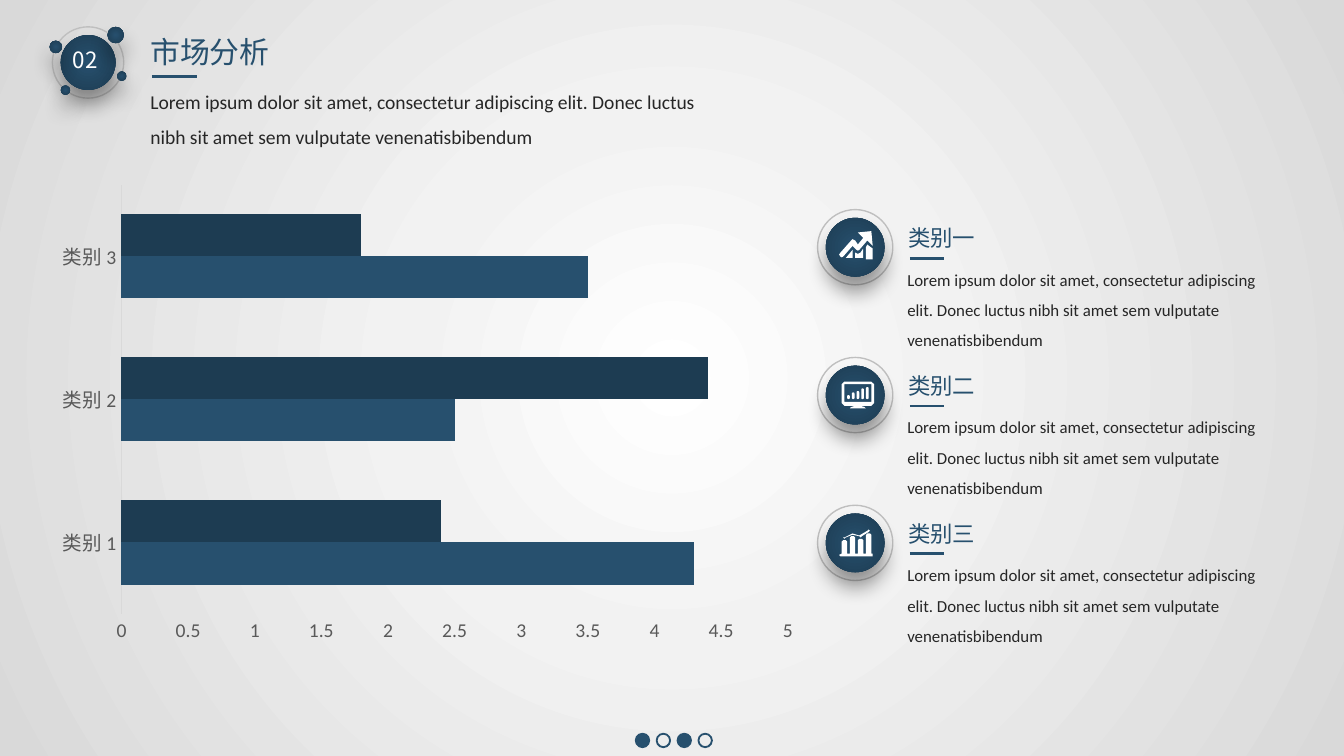
from pptx import Presentation
from pptx import util as u
from pptx.chart.data import CategoryChartData
from pptx.dml.color import RGBColor
from pptx.enum import chart as charts, shapes, text
from pptx.oxml import parse_xml
from pptx.oxml.ns import nsdecls, qn
from pptx.oxml.xmlchemy import OxmlElement

BLUE = RGBColor(0x27, 0x50, 0x6E)
NAVY = RGBColor(0x1D, 0x3C, 0x52)
INK = RGBColor(0x26, 0x26, 0x26)
GREY = RGBColor(0x59, 0x59, 0x59)
RING_GREY = RGBColor(0xBF, 0xBF, 0xBF)
AXIS_GREY = RGBColor(0xD9, 0xD9, 0xD9)
PALE_GREY = RGBColor(0xF2, 0xF2, 0xF2)
WHITE = RGBColor(0xFF, 0xFF, 0xFF)

HAN = "Noto Sans CJK SC"
LATIN = "Calibri"
LOREM = ("Lorem ipsum dolor sit amet, consectetur adipiscing elit. "
         "Donec luctus nibh sit amet sem vulputate venenatisbibendum")
ICON_UNIT = 0.72
BADGE_INSET = 4.4
ITEM_LEFT, ITEM_TOP, ITEM_STEP = 438, 112.3, 79.2


def points(*lengths):
    return [u.Pt(length) for length in lengths]


def make_radial(element, stops):
    gradient = element.find(".//" + qn("a:gradFill"))
    marks = "".join(f'<a:gs pos="{place * 1000}"><a:srgbClr val="{color}"/></a:gs>'
                    for place, color in stops)
    gradient.getparent().replace(gradient, parse_xml(
        f'<a:gradFill {nsdecls("a")} rotWithShape="1"><a:gsLst>{marks}</a:gsLst>'
        '<a:path path="circle"><a:fillToRect l="50000" t="50000" r="50000" b="50000"/>'
        '</a:path></a:gradFill>'))


def paint(shape, fill=None, line=None, width=1):
    shape.shadow.inherit = False
    if fill is None:
        shape.fill.background()
    else:
        shape.fill.solid()
        shape.fill.fore_color.rgb = fill
    if line is None:
        shape.line.fill.background()
    else:
        shape.line.color.rgb = line
        shape.line.width = u.Pt(width)


def add_circle(canvas, left, top, size, **style):
    circle = canvas.add_shape(shapes.MSO_SHAPE.OVAL, *points(left, top, size, size))
    paint(circle, **style)
    return circle


def add_disc(canvas, left, top, size):
    disc = add_circle(canvas, left, top, size)
    disc.fill.gradient()
    make_radial(disc.element, [(0, BLUE), (100, NAVY)])
    disc.element.spPr.find(qn("a:effectLst")).append(parse_xml(
        f'<a:outerShdw {nsdecls("a")} blurRad="{u.Pt(11)}" dist="{u.Pt(8)}" dir="5400000" '
        'algn="t" rotWithShape="0"><a:srgbClr val="000000"><a:alpha val="40000"/>'
        '</a:srgbClr></a:outerShdw>'))


def add_badge(canvas, left, top, size):
    add_circle(canvas, left, top, size, line=RING_GREY, width=0.75)
    add_disc(canvas, left + BADGE_INSET, top + BADGE_INSET, size - 2 * BADGE_INSET)


def fill_text(box, words, size, font, color, spacing=None, wrap=True):
    frame = box.text_frame
    frame.text = words
    frame.word_wrap = wrap
    frame.auto_size = text.MSO_AUTO_SIZE.SHAPE_TO_FIT_TEXT
    frame.vertical_anchor = text.MSO_ANCHOR.TOP
    para = frame.paragraphs[0]
    para.alignment = text.PP_ALIGN.LEFT
    para.space_before = u.Pt(0)
    if spacing:
        para.line_spacing = spacing
    span = para.runs[0]
    span.font.size = u.Pt(size)
    span.font.name = font
    span.font.color.rgb = color
    east_asian = OxmlElement("a:ea")
    east_asian.set("typeface", font)
    span.font._element.find(qn("a:latin")).addnext(east_asian)


def add_text(page, left, top, width, height, *content, **options):
    box = page.shapes.add_textbox(*points(left, top, width, height))
    fill_text(box, *content, **options)


def fill_placeholder(box, left, top, width, height, *content, **options):
    box.left, box.top, box.width, box.height = points(left, top, width, height)
    fill_text(box, *content, **options)


def remove_bullet(para):
    properties = para._p.get_or_add_pPr()
    properties.set("marL", "0")
    properties.set("indent", "0")
    properties.append(OxmlElement("a:buNone"))


def add_underline(page, left, top, length):
    rule = page.shapes.add_connector(shapes.MSO_CONNECTOR.STRAIGHT,
                                     *points(left, top, left + length, top))
    rule.line.color.rgb = BLUE
    rule.line.width = u.Pt(1.5)
    rule.element.spPr.append(OxmlElement("a:effectLst"))


def add_outline(canvas, left, top, *contours):
    placed = [[points(left + x * ICON_UNIT, top + y * ICON_UNIT) for x, y in contour]
              for contour in contours]
    builder = canvas.build_freeform(*placed[0][0], scale=1.0)
    builder.add_line_segments(placed[0][1:])
    for contour in placed[1:]:
        builder.move_to(*contour[0])
        builder.add_line_segments(contour[1:])
    paint(builder.convert_to_shape(), WHITE)


def draw_growth(canvas, left, top):
    for contour in (
        [(37, 26), (36, 28), (36, 37), (41, 37), (41, 29)],
        [(26, 27), (19, 35), (18, 35.5), (17, 35), (16, 33.5), (17, 32), (25, 23),
         (26, 22), (28, 23), (30, 26), (34, 21), (30, 17), (40, 16), (41, 27),
         (37, 23), (31, 30), (30, 30.5), (29, 30)],
        [(32, 32), (30, 33), (28, 32), (28, 36), (34, 36), (34, 29)],
        [(21, 36), (26, 36), (26, 30)],
    ):
        add_outline(canvas, left, top, contour)


def draw_monitor(canvas, left, top):
    frame = [(20, 18), (40, 18), (42, 20), (42, 34), (40, 36), (32, 36), (35, 37),
             (36, 38), (24, 38), (25, 37), (28, 36), (20, 36), (18, 34), (18, 20)]
    screen = [(20, 20), (20, 33), (40, 33), (40, 20)]
    add_outline(canvas, left, top, frame, screen)
    for x, y in zip((22, 25.5, 29, 32.5, 36), (28, 26, 25, 23, 22)):
        bar = canvas.add_shape(shapes.MSO_SHAPE.ROUNDED_RECTANGLE, *points(
            left + x * ICON_UNIT, top + y * ICON_UNIT, 2 * ICON_UNIT, (31 - y) * ICON_UNIT))
        bar.adjustments[0] = 0.5
        paint(bar, WHITE)


def draw_columns(canvas, left, top):
    trend = [(19, 24), (20, 24), (25, 21.5), (26, 21), (31, 22.5), (32, 22), (37, 19),
             (38, 18), (39, 19), (38, 20), (33, 23), (32, 24), (31, 23), (26, 22),
             (21, 24), (20, 25)]
    skyline = [(16, 37)]
    for x, y in zip((18, 24, 30, 36), (26, 23, 25, 21)):
        skyline += [(x, 36), (x, y + 1), (x + 1, y), (x + 3, y), (x + 4, y + 1), (x + 4, 36)]
    add_outline(canvas, left, top, trend)
    add_outline(canvas, left, top, skyline + [(41, 36), (41, 38), (17, 38)])


def add_item(page, top, heading, font, draw_icon):
    add_badge(page.shapes.add_group_shape().shapes, ITEM_LEFT, top, 40.3)
    draw_icon(page.shapes.add_group_shape().shapes, ITEM_LEFT, top)
    add_text(page, 479, top + 23, 213.8, 56.2, LOREM, 9, LATIN, INK, spacing=1.5)
    add_text(page, 479.5, top + 4.3, 136.8, 21.6, heading, 12, font, BLUE)
    add_underline(page, 487.5, top + 26, 18)


def style_axis(axis):
    axis.has_major_gridlines = False
    axis.major_tick_mark = axis.minor_tick_mark = charts.XL_TICK_MARK.NONE
    font = axis.tick_labels.font
    font.size, font.name = u.Pt(10.5), LATIN
    font.color.rgb = GREY


def add_bar_chart(page):
    data = CategoryChartData()
    data.categories = ["类别 1", "类别 2", "类别 3"]
    data.add_series("Series 1", (4.3, 2.5, 3.5))
    data.add_series("Series 2", (2.4, 4.4, 1.8))
    chart = page.shapes.add_chart(charts.XL_CHART_TYPE.BAR_CLUSTERED,
                                  *points(25.4, 93.8, 407.5, 255.8), data).chart
    chart.has_legend = chart.has_title = False
    chart.font.size, chart.font.name = u.Pt(10), LATIN
    for axis in (chart.category_axis, chart.value_axis):
        style_axis(axis)
    chart.category_axis.format.line.color.rgb = AXIS_GREY
    chart.category_axis.format.line.width = u.Pt(0.75)
    values = chart.value_axis
    values.format.line.fill.background()
    values.minimum_scale, values.maximum_scale, values.major_unit = 0, 5, 0.5
    plot = chart.plots[0]
    plot.gap_width, plot.overlap = 138, 1
    plot.vary_by_categories = False
    for series, color in zip(plot.series, (BLUE, NAVY)):
        series.format.fill.solid()
        series.format.fill.fore_color.rgb = color


def add_header(page):
    title, body = page.placeholders
    fill_placeholder(title, 73.4, 14.4, 78.5, 26.6, "市场分析", 16, HAN, BLUE, wrap=False)
    fill_placeholder(body, 73.4, 38.2, 321.8, 44.6, LOREM, 10.5, LATIN, INK, spacing=1.5)
    remove_bullet(body.text_frame.paragraphs[0])
    add_underline(page, 81.4, 41, 24.4)
    emblem = page.shapes.add_group_shape().shapes
    add_badge(emblem, 28.1, 14.4, 38.2)
    for left, top, size in ((57.6, 14.4, 8.8), (26.6, 21.8, 6.7),
                            (32.6, 45.8, 5), (62.8, 38.3, 5)):
        add_disc(emblem, left, top, size)
    add_text(page, 31.9, 21.4, 29, 21.6, "02", 12, HAN, WHITE, wrap=False)


def main():
    deck = Presentation()
    deck.slide_width, deck.slide_height = points(720, 405)
    page = deck.slides.add_slide(deck.slide_layouts[1])
    page.background.fill.gradient()
    make_radial(page.element, [(0, WHITE), (35, PALE_GREY), (100, AXIS_GREY)])
    add_header(page)
    add_bar_chart(page)
    items = (("类别一", HAN, draw_growth), ("类别二", HAN, draw_monitor),
             ("类别三", "Arial", draw_columns))
    for row, item in enumerate(items):
        add_item(page, ITEM_TOP + row * ITEM_STEP, *item)
    pager = page.shapes.add_group_shape().shapes
    for number in range(4):
        add_circle(pager, 340.6 + number * 11.2, 393.1, 7.2,
                   fill=None if number % 2 else BLUE, line=BLUE)
    deck.save("out.pptx")


if __name__ == "__main__":
    main()
